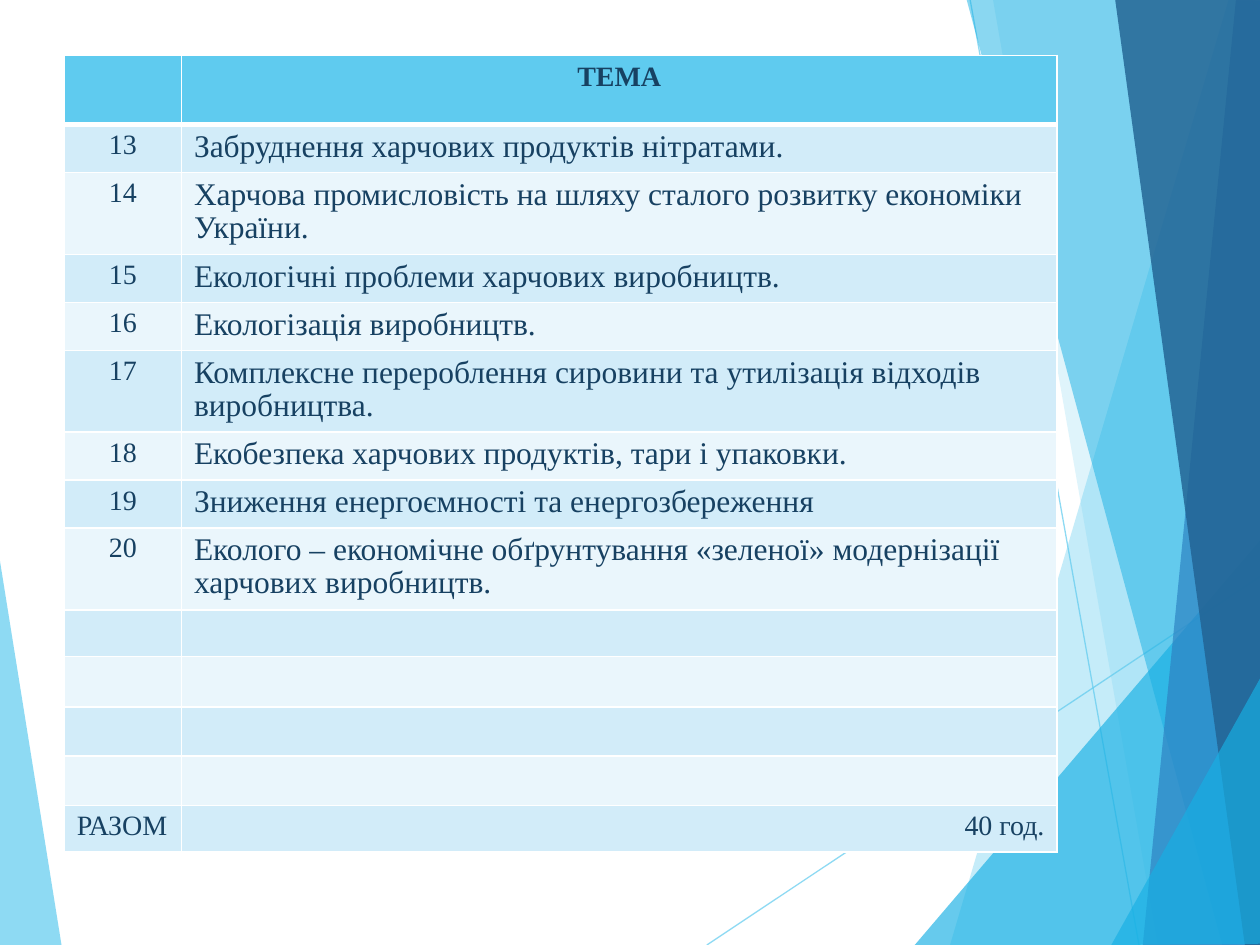
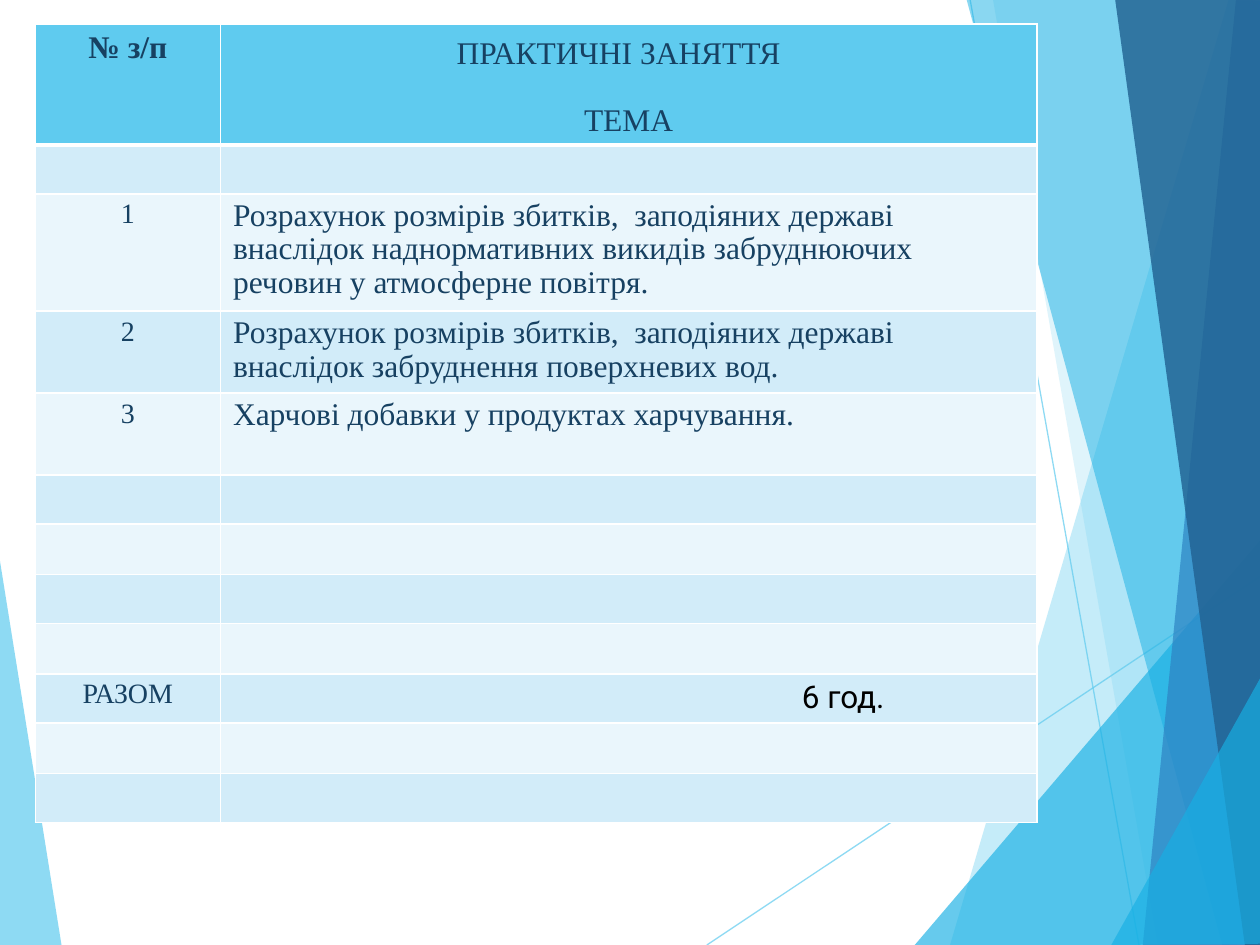
"""Build two course-plan table slides over a shared faceted backdrop."""
from lxml import etree
from pptx import Presentation
from pptx.dml.color import RGBColor
from pptx.enum.shapes import MSO_CONNECTOR
from pptx.enum.text import MSO_ANCHOR, PP_ALIGN
from pptx.oxml.ns import qn
from pptx.util import Inches, Pt

STRAIGHT = MSO_CONNECTOR.STRAIGHT
LEFT, CENTER, RIGHT = PP_ALIGN.LEFT, PP_ALIGN.CENTER, PP_ALIGN.RIGHT
BOTTOM = MSO_ANCHOR.BOTTOM
SKY = RGBColor(0x5F, 0xCB, 0xEF)
CYAN = RGBColor(0x17, 0xB0, 0xE4)
BLUE = RGBColor(0x2E, 0x83, 0xC3)
NAVY = RGBColor(0x22, 0x62, 0x92)
INK = RGBColor(0x17, 0x41, 0x62)
BLACK = RGBColor(0, 0, 0)
BANDS = [RGBColor(0xEA, 0xF6, 0xFC), RGBColor(0xD2, 0xEC, 0xF9)]
SERIF = "Times New Roman"

FACETS_BACK = [
    (SKY, 70, [(-0.01, 4.39), (0.49, 7.51), (-0.01, 7.5)]),
]
RAYS = [(5.61, 7.5, 10.01, 4.57), (7.7, 0, 9.04, 7.5)]
FACETS_FRONT = [
    (SKY, 36, [(9.75, 0), (7.54, 7.5), (10.02, 7.51), (10.01, 0.01)]),
    (SKY, 20, [(7.88, -0.01), (9.19, 7.5), (10.01, 7.5), (10.01, -0.01)]),
    (CYAN, 66, [(7.26, 7.5), (10, 4.29), (10.01, 7.5)]),
    (CYAN, 50, [(7.67, -0.01), (9.7, 7.5), (10.01, 7.49), (10.01, -0.01)]),
    (BLUE, 70, [(9.81, -0.01), (9.07, 7.5), (10.01, 7.5), (10, -0.01)]),
    (NAVY, 82, [(8.85, -0.01), (9.88, 7.5), (10.02, 7.5), (10, -0.01)]),
    (CYAN, 66, [(8.82, 7.5), (10.02, 5.35), (10.02, 7.49)]),
]

TABLES = [
    {
        "at": (0.51, 0.44), "cols": (0.93, 6.95),
        "rows": [
            ("", "ТЕМА", 0.55),
            ("13", "Забруднення харчових продуктів нітратами.", 0.38),
            ("14", "Харчова промисловість на шляху сталого розвитку економіки України.", 0.65),
            ("15", "Екологічні проблеми харчових виробництв.", 0.38),
            ("16", "Екологізація виробництв.", 0.38),
            ("17", "Комплексне перероблення сировини та утилізація відходів виробництва.", 0.65),
            ("18", "Екобезпека харчових продуктів, тари і упаковки.", 0.38),
            ("19", "Зниження енергоємності та енергозбереження", 0.38),
            ("20", "Еколого – економічне обґрунтування «зеленої» модернізації "
                   "харчових виробництв.", 0.65),
            ("", "", 0.37), ("", "", 0.4), ("", "", 0.39), ("", "", 0.39),
            ("РАЗОМ", "40 год.", 0.37),
        ],
        "special": {
            (0, 1): {"size": 16, "bold": True},
            (13, 0): {"align": LEFT},
            (13, 1): {"size": 16, "align": RIGHT},
        },
    },
    {
        "at": (0.28, 0.19), "cols": (1.47, 6.48),
        "rows": [
            ("№ з/п", "ТЕМА", 0.96),
            ("", "", 0.39),
            ("1", "Розрахунок розмірів збитків,  заподіяних державі внаслідок "
                  "наднормативних викидів забруднюючих речовин у атмосферне повітря.", 0.93),
            ("2", "Розрахунок розмірів збитків,  заподіяних державі внаслідок "
                  "забруднення поверхневих вод.", 0.65),
            ("3", "Харчові добавки у продуктах харчування.", 0.65),
            ("", "", 0.39), ("", "", 0.4), ("", "", 0.39), ("", "", 0.4),
            ("РАЗОМ", "6 год.", 0.39),
            ("", "", 0.4), ("", "", 0.39),
        ],
        "special": {
            (0, 0): {"size": 18, "bold": True},
            (0, 1): {"anchor": BOTTOM},
            (9, 1): {"align": RIGHT, "margin": 1.21, "name": "Roboto", "color": BLACK},
        },
    },
]


def set_alpha(shape, percent):
    for color in shape._element.spPr.iter(qn("a:srgbClr")):
        etree.SubElement(color, qn("a:alpha"), val=str(percent * 1000))


def write(p, text, fmt):
    p.alignment = fmt["align"]
    r = p.add_run()
    r.text = text
    r.font.size = Pt(fmt["size"])
    r.font.color.rgb = fmt["color"]
    for key in ("name", "bold"):
        setattr(r.font, key, fmt[key])


prs = Presentation()
prs.slide_width, prs.slide_height = Inches(10), Inches(7.5)
layout = prs.slide_layouts[6]
slides = [prs.slides.add_slide(layout) for _ in TABLES]

backdrop = []
shapes = slides[0].shapes
for facets, rays in ((FACETS_BACK, RAYS), (FACETS_FRONT, [])):
    for color, alpha, points in facets:
        points = [(Inches(x), Inches(y)) for x, y in points]
        builder = shapes.build_freeform(*points[0])
        builder.add_line_segments(points[1:])
        facet = builder.convert_to_shape()
        facet.shadow.inherit = False
        facet.fill.solid()
        facet.fill.fore_color.rgb = color
        facet.line.fill.background()
        set_alpha(facet, alpha)
        backdrop.append(facet)
    for ends in rays:
        ray = shapes.add_connector(STRAIGHT, *map(Inches, ends))
        ray.line.color.rgb = SKY
        ray.line.width = Pt(0.75)
        set_alpha(ray, 70)
        etree.SubElement(ray._element.spPr, qn("a:effectLst"))
        backdrop.append(ray)
for shape in backdrop:
    layout.shapes._spTree.append(shape._element)

for s, spec in zip(slides, TABLES):
    rows, cols = spec["rows"], spec["cols"]
    height = sum(row[-1] for row in rows)
    box = map(Inches, (*spec["at"], sum(cols), height))
    table = s.shapes.add_table(len(rows), len(cols), *box).table
    for column, width in zip(table.columns, cols):
        column.width = Inches(width)
    for i, (*texts, row_height) in enumerate(rows):
        table.rows[i].height = Inches(row_height)
        for j, text in enumerate(texts):
            fmt = {"size": 18 if j else 16, "bold": False, "name": SERIF, "color": INK,
                   "align": LEFT if i and j else CENTER}
            fmt.update(spec["special"].get((i, j), {}))
            cell = table.cell(i, j)
            tcPr = cell._tc.get_or_add_tcPr()
            thick = {"lnB": i == 0, "lnT": i == 1}
            for side in ("lnL", "lnR", "lnT", "lnB"):
                width = Pt(3 if thick.get(side) else 1)
                ln = etree.SubElement(tcPr, qn("a:" + side), w=str(width))
                fill = etree.SubElement(ln, qn("a:solidFill"))
                etree.SubElement(fill, qn("a:srgbClr"), val="FFFFFF")
            cell.fill.solid()
            cell.fill.fore_color.rgb = BANDS[i % 2] if i else SKY
            if "anchor" in fmt:
                cell.vertical_anchor = fmt["anchor"]
            if "margin" in fmt:
                cell.margin_right = Inches(fmt["margin"])
            p = cell.text_frame.paragraphs[0]
            if text:
                p.line_spacing = 0.95 if i else 1.0
                write(p, text, fmt)
            else:
                etree.SubElement(p._p, qn("a:endParaRPr"), sz="1600")

box = map(Inches, (2.4, 0.21, 5.02, 0.4))
tf = slides[1].shapes.add_textbox(*box).text_frame
tf.word_wrap = True
write(tf.paragraphs[0], "ПРАКТИЧНІ ЗАНЯТТЯ",
      {"size": 18, "bold": False, "name": SERIF, "color": INK, "align": CENTER})

prs.save("out.pptx")
